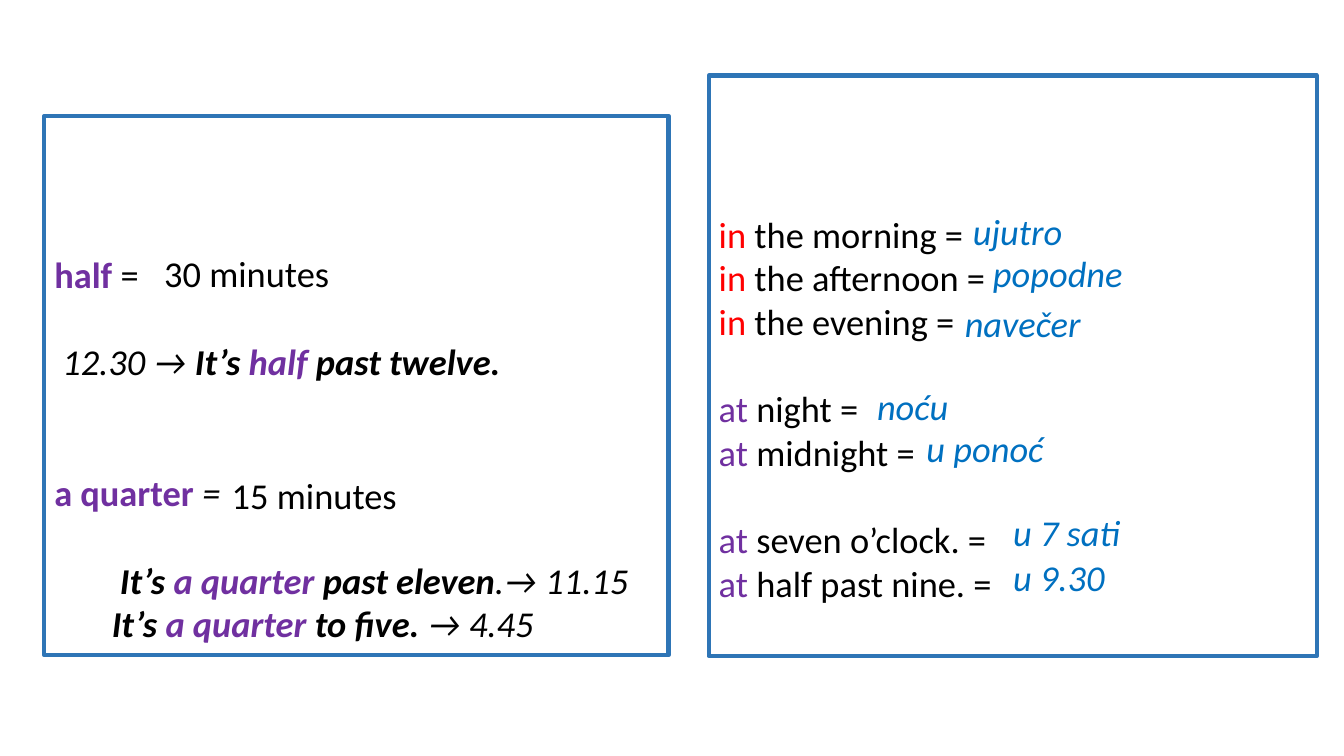
"""Build a slide on telling the time and on time phrases with in and at."""
from pptx import Presentation
from pptx.dml.color import RGBColor
from pptx.enum.shapes import MSO_SHAPE
from pptx.enum.text import MSO_ANCHOR, PP_ALIGN
from pptx.util import Inches, Pt

RECTANGLE = MSO_SHAPE.RECTANGLE
TOP = MSO_ANCHOR.TOP
LEFT = PP_ALIGN.LEFT
BLACK = RGBColor(0x00, 0x00, 0x00)
RED = RGBColor(0xFF, 0x00, 0x00)
PURPLE = RGBColor(0x70, 0x30, 0xA0)
BLUE = RGBColor(0x00, 0x70, 0xC0)
BORDER = RGBColor(0x2E, 0x75, 0xB6)
FONT = "Calibri"
SIZE = Pt(26)
LINE_PITCH = 31.2


def style(font, color, bold=False, italic=False):
    font.name, font.size = FONT, SIZE
    font.color.rgb = color
    font.bold, font.italic = bold, italic


def add_panel(slide, box, lines):
    sp = slide.shapes.add_shape(RECTANGLE, *[Inches(v) for v in box])
    sp.shadow.inherit = False
    sp.fill.background()
    sp.line.color.rgb = BORDER
    sp.line.width = Pt(3)
    tf = sp.text_frame
    tf.word_wrap = True
    tf.vertical_anchor = TOP
    tf.margin_top = Inches(1.35)
    for i, (gap, indent, runs) in enumerate(lines):
        p = tf.paragraphs[0] if i == 0 else tf.add_paragraph()
        p.alignment = LEFT
        p.space_before = Pt(gap * LINE_PITCH)
        p._p.get_or_add_pPr().set("marL", str(Inches(indent)))
        for text, color, bold, italic in runs:
            r = p.add_run()
            r.text = text
            style(r.font, color, bold, italic)


prs = Presentation()
prs.slide_width, prs.slide_height = Inches(13.33), Inches(7.5)
s = prs.slides.add_slide(prs.slide_layouts[6])

clock_lines = [
    (0, 0, [("half ", PURPLE, True, False), ("=", BLACK, False, False)]),
    (1, 0.08, [("12.30 → ", BLACK, False, True), ("It’s ", BLACK, True, True),
               ("half", PURPLE, True, True), (" past twelve.", BLACK, True, True)]),
    (2, 0, [("a quarter ", PURPLE, True, False), ("=", BLACK, False, True)]),
    (1, 0.65, [("It’s ", BLACK, True, True), ("a quarter ", PURPLE, True, True),
               ("past eleven", BLACK, True, True), (".→ 11.15", BLACK, False, True)]),
    (0, 0.57, [("It’s ", BLACK, True, True), ("a quarter ", PURPLE, True, True),
               ("to five. ", BLACK, True, True), ("→ 4.45", BLACK, False, True)]),
]
add_panel(s, (0.44, 1.15, 6.19, 5.35), clock_lines)

phrases = [
    (0, "in", RED, "the morning ="),
    (0, "in", RED, "the afternoon ="),
    (0, "in", RED, "the evening ="),
    (1, "at", PURPLE, "night ="),
    (0, "at", PURPLE, "midnight ="),
    (1, "at", PURPLE, "seven o’clock. ="),
    (0, "at", PURPLE, "half past nine. ="),
]
phrase_lines = [
    (gap, 0, [(word + " ", color, False, False), (rest, BLACK, False, False)])
    for gap, word, color, rest in phrases
]
add_panel(s, (7.03, 0.75, 6.03, 5.76), phrase_lines)

answers = [
    ("ujutro", 9.55, 2.03, 3.11, BLUE),
    ("popodne", 9.75, 2.44, 3.11, BLUE),
    ("navečer", 9.47, 2.94, 3.11, BLUE),
    ("noću", 8.6, 3.76, 3.11, BLUE),
    ("u ponoć", 9.09, 4.18, 3.11, BLUE),
    ("u 7 sati", 9.95, 5.01, 3.11, BLUE),
    ("u 9.30", 9.95, 5.46, 3.11, BLUE),
    ("30 minutes", 1.53, 2.44, 1.85, BLACK),
    ("15 minutes", 2.2, 4.64, 1.85, BLACK),
]
for text, left, top, width, color in answers:
    tb = s.shapes.add_textbox(Inches(left), Inches(top), Inches(width), Inches(0.54))
    tf = tb.text_frame
    tf.word_wrap = True
    p = tf.paragraphs[0]
    p.text = text
    style(p.font, color, italic=color == BLUE)

prs.save("out.pptx")
